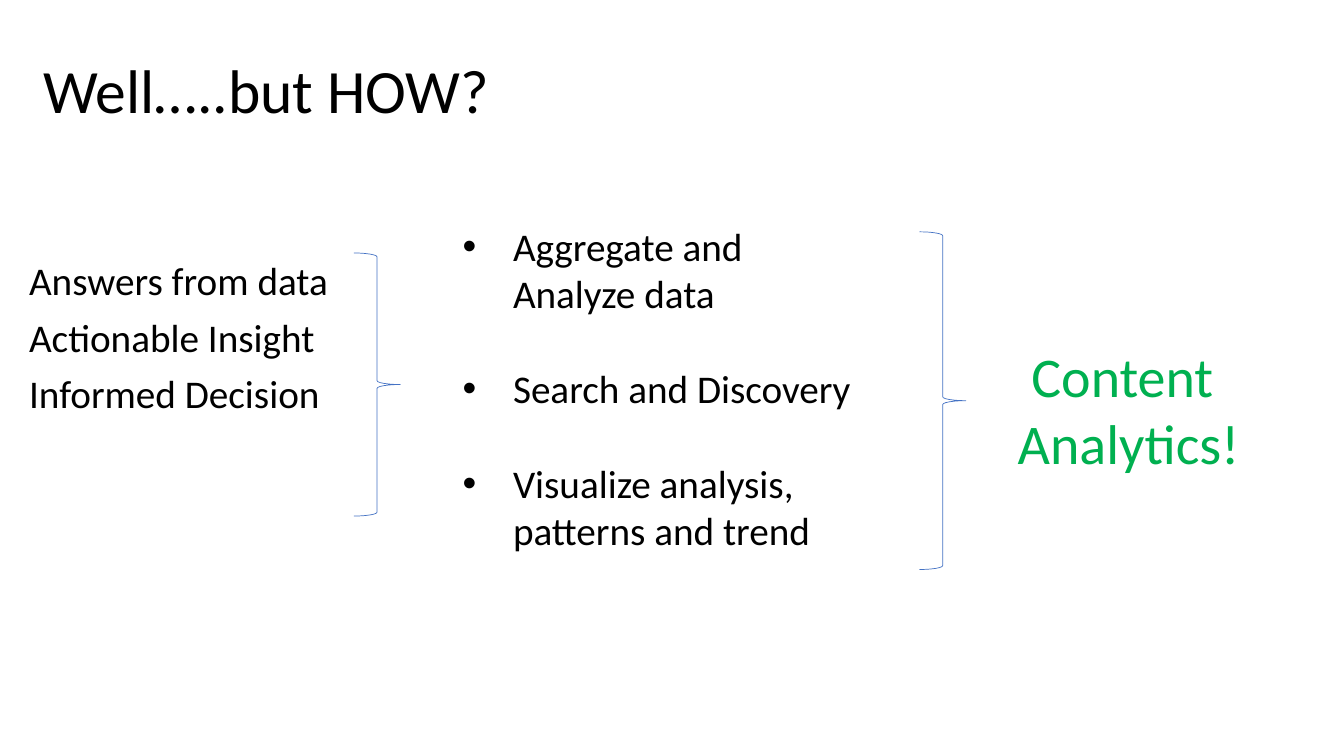
from dataclasses import dataclass

from lxml.etree import SubElement
from pptx import Presentation
from pptx.dml.color import RGBColor
from pptx.enum.shapes import MSO_SHAPE
from pptx.enum.text import MSO_ANCHOR, MSO_AUTO_SIZE, PP_ALIGN
from pptx.oxml.ns import qn
from pptx.util import Inches, Pt


@dataclass(frozen=True)
class Theme:
    font: str = "Calibri"
    ink: RGBColor = RGBColor(0, 0, 0)
    green: RGBColor = RGBColor(0x00, 0xB0, 0x50)
    blue: RGBColor = RGBColor(0x44, 0x72, 0xC4)
    title: Pt = Pt(44)
    result: Pt = Pt(40)
    body: Pt = Pt(28)
    rule: Pt = Pt(0.5)


THEME = Theme()


def add_text(slide, box, lines, size, color=THEME.ink, wrap=True):
    """Add a text box with one paragraph per line and return its frame."""
    frame = slide.shapes.add_textbox(*map(Inches, box)).text_frame
    frame.word_wrap = wrap
    frame.text = "\n".join(lines)
    for para in frame.paragraphs:
        para.font.name = THEME.font
        para.font.size = size
        para.font.color.rgb = color
    return frame


def add_bullet(para, indent):
    props = para._p.get_or_add_pPr()
    props.set("marL", str(Inches(indent)))
    props.set("indent", str(-Inches(indent)))
    SubElement(props, qn("a:buFont"), typeface="Arial")
    SubElement(props, qn("a:buChar"), char="•")


def add_brace(slide, box):
    brace = slide.shapes.add_shape(MSO_SHAPE.RIGHT_BRACE, *map(Inches, box))
    brace.shadow.inherit = False
    brace.fill.background()
    brace.line.color.rgb = THEME.blue
    brace.line.width = THEME.rule


def add_title(slide):
    frame = add_text(slide, (0.33, 0.26, 5.87, 1.33), ["Well…..but HOW?"], THEME.title)
    frame.vertical_anchor = MSO_ANCHOR.MIDDLE
    frame.paragraphs[0].line_spacing = 0.9


def add_goals(slide):
    goals = ["Answers from data", "Actionable Insight", "Informed Decision"]
    frame = add_text(slide, (0.19, 1.98, 3.55, 3.66), goals, THEME.body)
    frame.margin_top = Inches(0.62)
    for para in frame.paragraphs:
        para.line_spacing = 0.9
        para.space_before = Pt(10)


def add_steps(slide):
    steps = [
        "Aggregate and Analyze data",
        "Search and Discovery",
        "Visualize analysis, patterns and trend",
    ]
    frame = add_text(slide, (4.49, 2.16, 4.23, 3.4), steps, THEME.body)
    frame.auto_size = MSO_AUTO_SIZE.SHAPE_TO_FIT_TEXT
    for para in frame.paragraphs[:-1]:
        para.space_after = Pt(34)
    for para in frame.paragraphs:
        add_bullet(para, 0.5)


def add_result(slide):
    frame = add_text(slide, (9.98, 3.34, 2.43, 1.45), ["Content ", "Analytics!"],
                     THEME.result, THEME.green, wrap=False)
    frame.auto_size = MSO_AUTO_SIZE.SHAPE_TO_FIT_TEXT
    for para in frame.paragraphs:
        para.alignment = PP_ALIGN.CENTER


def main():
    deck = Presentation()
    deck.slide_width, deck.slide_height = Inches(13.33), Inches(7.5)
    slide = deck.slides.add_slide(deck.slide_layouts[6])
    add_goals(slide)
    add_title(slide)
    add_brace(slide, (3.51, 2.51, 0.46, 2.61))
    add_brace(slide, (9.12, 2.3, 0.46, 3.35))
    add_steps(slide)
    add_result(slide)
    deck.save("out.pptx")


if __name__ == "__main__":
    main()
